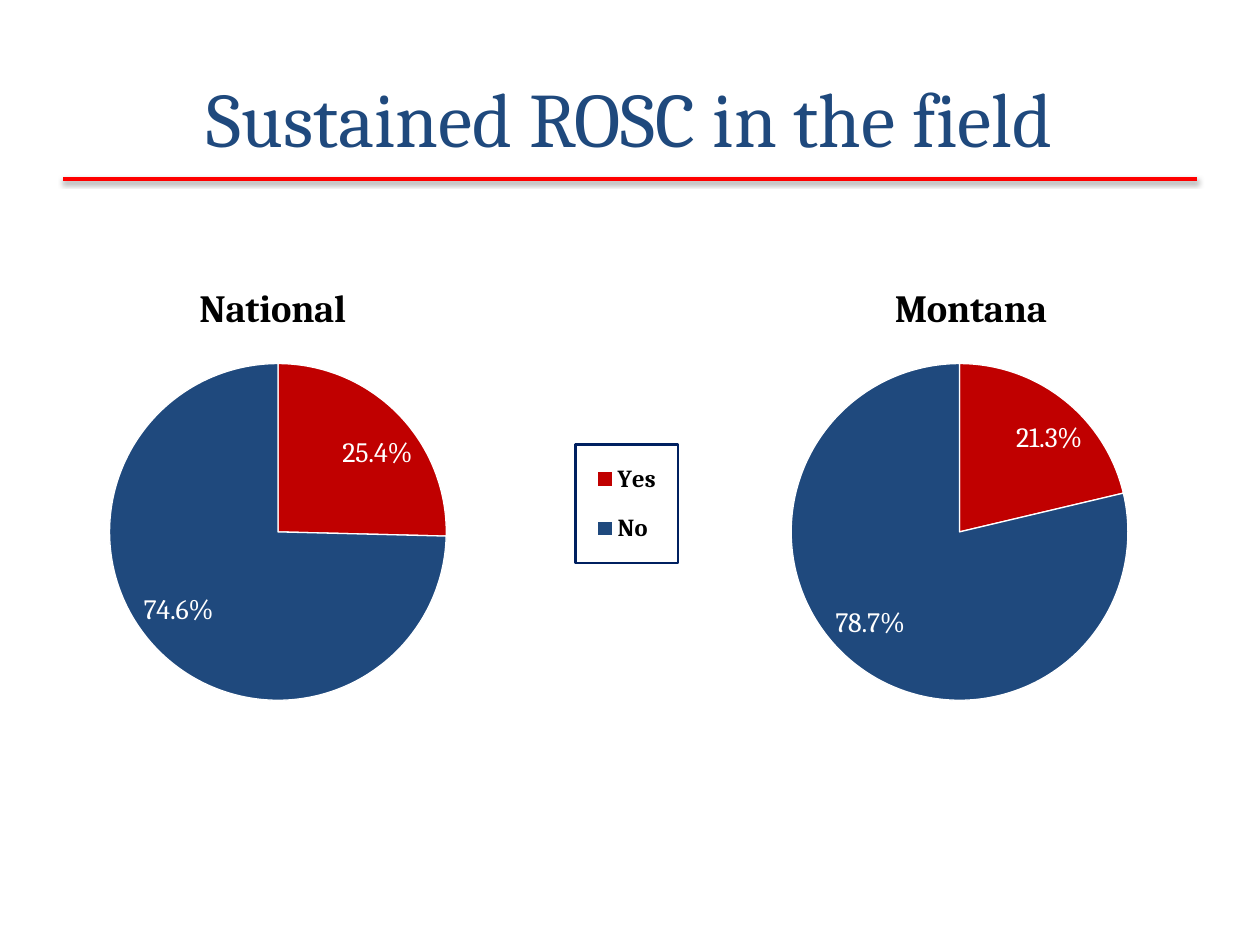
"""Build a slide comparing sustained ROSC nationally and in Montana."""
from pptx import Presentation
from pptx.chart.data import CategoryChartData as ChartData
from pptx.dml.color import RGBColor
from pptx.enum.chart import XL_CHART_TYPE as Kind, XL_LABEL_POSITION as Spot, XL_LEGEND_POSITION as Side
from pptx.enum.shapes import MSO_CONNECTOR as Link
from pptx.enum.text import MSO_ANCHOR as Anchor, PP_ALIGN as Align
from pptx.oxml import parse_xml
from pptx.oxml.ns import nsdecls
from pptx.util import Inches, Pt

RED = RGBColor(0xFF, 0, 0)
CRIMSON = RGBColor(0xC0, 0, 0)
BLUE = RGBColor(0x1F, 0x49, 0x7D)
BLACK = RGBColor(0, 0, 0)
WHITE = RGBColor(0xFF, 0xFF, 0xFF)
FACE = "Cambria"

TITLE = "Sustained ROSC in the field"
SLICES = {"Yes": CRIMSON, "No": BLUE}
PIES = [
    {"name": "National", "vals": (25.4, 74.6), "left": 0.17, "head": 0.25, "key": True},
    {"name": "Montana", "vals": (21.3, 78.7), "left": 5.58, "head": 0.27, "key": False},
]
TOP, WIDTH, HEIGHT = 1.5, 5.43, 4.95
PLOT = {"x": 0.1, "y": 0.28, "w": 0.55, "h": 0.54}
KEY = {"x": 0.81, "y": 0.41, "w": 0.15, "h": 0.19}

SHADOW = f"""<a:effectLst {nsdecls('a')}>
<a:outerShdw blurRad="39370" dist="20320" dir="5400000" rotWithShape="0">
<a:srgbClr val="000000"><a:alpha val="38000"/></a:srgbClr></a:outerShdw></a:effectLst>"""
BORDER = f"""<c:spPr {nsdecls('c', 'a')}><a:ln w="19050"><a:solidFill>
<a:srgbClr val="002060"/></a:solidFill></a:ln></c:spPr>"""


def style(font, size, color, bold=False):
    look = {"name": FACE, "size": Pt(size), "bold": bold}
    for key, val in look.items():
        setattr(font, key, val)
    font.color.rgb = color


def place(chart, tag, index, box, inner=False):
    node = chart.element.xpath(f".//c:{tag}")[0]
    for old in node.xpath("./c:layout"):
        node.remove(old)
    parts = '<c:layoutTarget val="inner"/>' if inner else ""
    parts += "".join(f'<c:{k}Mode val="edge"/>' for k in "xy")
    parts += "".join(f'<c:{k} val="{v}"/>' for k, v in box.items())
    node.insert(index, parse_xml(
        f"<c:layout {nsdecls('c')}><c:manualLayout>{parts}</c:manualLayout></c:layout>"))
    return node


def add_pie(slide, pie):
    data = ChartData()
    data.categories = list(SLICES)
    data.add_series("Series 1", pie["vals"])
    area = [Inches(n) for n in (pie["left"], TOP, WIDTH, HEIGHT)]
    chart = slide.shapes.add_chart(Kind.PIE, *area, data).chart
    style(chart.font, 18, BLACK)

    chart.has_title = True
    head = chart.chart_title.text_frame
    head.text = pie["name"]
    style(head.paragraphs[0].runs[0].font, 22, BLACK, True)
    place(chart, "title", 1, {"x": pie["head"], "y": 0.14})
    place(chart, "plotArea", 0, PLOT, True)

    plot = chart.plots[0]
    plot.vary_by_categories = True
    for i, color in enumerate(SLICES.values()):
        form = plot.series[0].points[i].format
        form.fill.solid()
        form.fill.fore_color.rgb = color
        form.line.color.rgb = WHITE
        form.line.width = Pt(0.75)
    labels = plot.series[0].data_labels
    look = {"show_percentage": True, "show_value": False, "number_format": "0.0%",
            "number_format_is_linked": False, "position": Spot.BEST_FIT}
    for key, val in look.items():
        setattr(labels, key, val)
    style(labels.font, 16, WHITE)

    chart.has_legend = pie["key"]
    if pie["key"]:
        chart.legend.position = Side.RIGHT
        chart.legend.include_in_layout = False
        style(chart.legend.font, 14, BLACK, True)
        node = place(chart, "legend", 1, KEY)
        node.xpath("./c:txPr")[0].addprevious(parse_xml(BORDER))


def main():
    deck = Presentation()
    deck.slide_width, deck.slide_height = Inches(10), Inches(7.5)
    slide = deck.slides.add_slide(deck.slide_layouts[5])

    rule = slide.shapes.add_connector(
        Link.STRAIGHT, Inches(0.5), Inches(1.42), Inches(9.5), Inches(1.42))
    rule.line.color.rgb = RED
    rule.line.width = Pt(2)
    rule.element.spPr.append(parse_xml(SHADOW))

    title = slide.shapes.title
    area = {"left": 0.5, "top": 0.3, "width": 9, "height": 1.25}
    for key, val in area.items():
        setattr(title, key, Inches(val))
    frame = title.text_frame
    frame.text = TITLE
    frame.vertical_anchor = Anchor.MIDDLE
    frame.paragraphs[0].alignment = Align.CENTER
    style(frame.paragraphs[0].runs[0].font, 44, BLUE)

    for pie in PIES:
        add_pie(slide, pie)
    deck.save("out.pptx")


if __name__ == "__main__":
    main()
